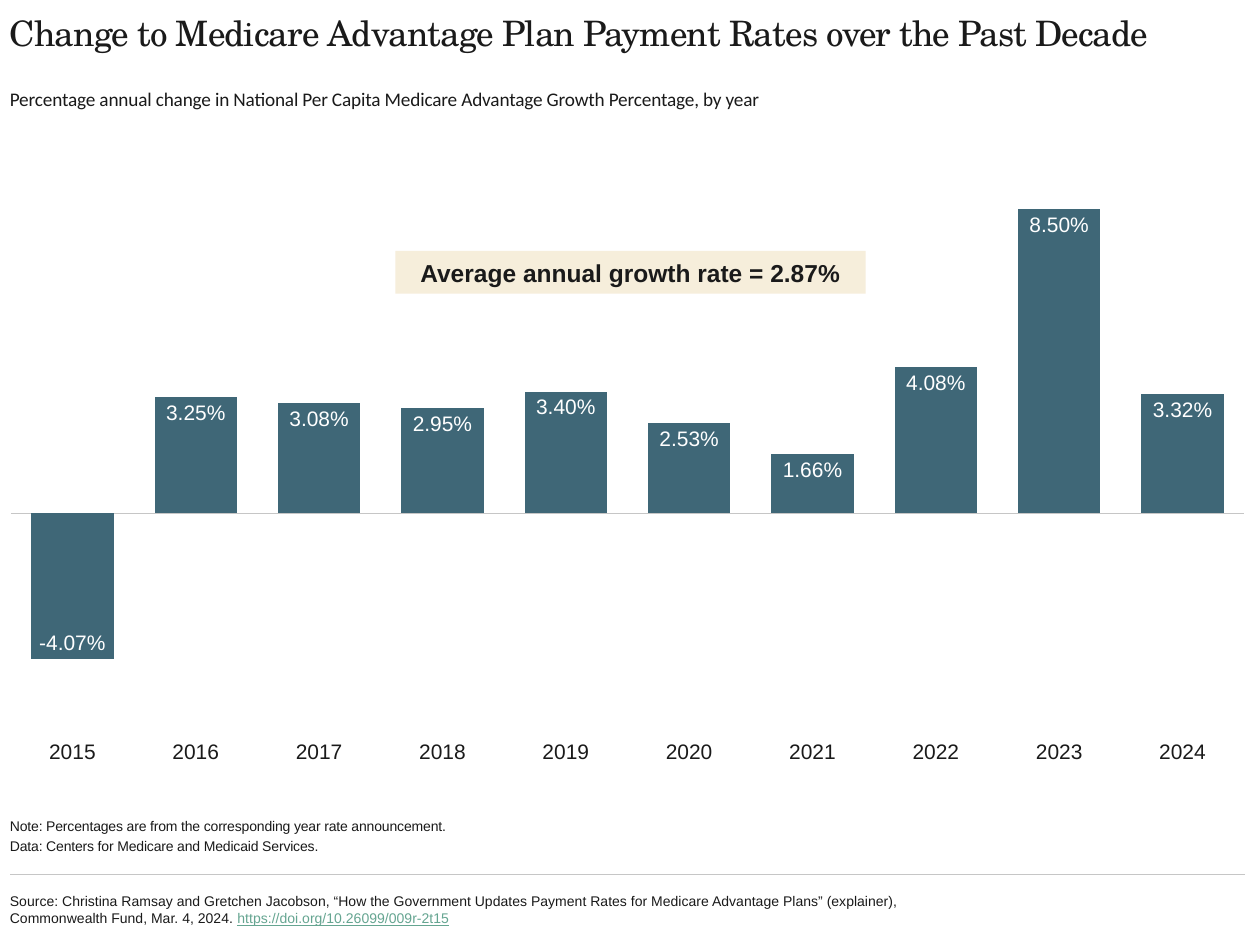
import pptx
import pptx.chart.data
import pptx.dml.color
import pptx.enum.chart
import pptx.enum.shapes
import pptx.enum.text
import pptx.oxml
import pptx.oxml.ns
import pptx.util

Cm = pptx.util.Cm
Pt = pptx.util.Pt
RGBColor = pptx.dml.color.RGBColor
ANCHOR = pptx.enum.text.MSO_ANCHOR
ALIGN = pptx.enum.text.PP_ALIGN

INK = RGBColor(0x1A, 0x1A, 0x1A)
TEAL = RGBColor(0x3F, 0x67, 0x77)
CREAM = RGBColor(0xF6, 0xEE, 0xDB)
GRAY = RGBColor(0xC6, 0xC6, 0xC6)
GREEN = RGBColor(0x65, 0xA5, 0x91)
WHITE = RGBColor(0xFF, 0xFF, 0xFF)

TITLE = "Change to Medicare Advantage Plan Payment Rates over the Past Decade"
SUBTITLE = "Percentage annual change in National Per Capita Medicare Advantage Growth Percentage, by year"
CALLOUT = "Average annual growth rate = 2.87%"
NOTES = [
    "Note: Percentages are from the corresponding year rate announcement.",
    "Data: Centers for Medicare and Medicaid Services.",
]
SOURCE = (
    "Source: Christina Ramsay and Gretchen Jacobson, “How the Government Updates Payment Rates "
    "for Medicare Advantage Plans” (explainer), Commonwealth Fund, Mar. 4, 2024. "
)
SOURCE_ADDRESS = "https://doi.org/10.26099/009r-2t15"
FIRST_YEAR = 2015
RATES = [-0.0407, 0.0325, 0.0308, 0.0295, 0.034, 0.0253, 0.0166, 0.0408, 0.085, 0.0332]

LEFT, WIDTH = 0.2, 24.9
PLOT_LAYOUT = {"x": 0, "y": 0.03, "w": 1, "h": 0.9}

TITLE_FONT = {"name": "TeX Gyre Schola", "size": Pt(20)}
SUBTITLE_FONT = {"name": "Calibri", "size": Pt(11)}
SMALL_FONT = {"name": "Arial", "size": Pt(8)}
CHART_FONT = {"name": "Arial", "size": Pt(12)}
CALLOUT_FONT = {"name": "Arial", "size": Pt(14), "bold": True}


def set_values(target, values):
    for name, value in values.items():
        setattr(target, name, value)


def format_font(font, values, color=INK):
    set_values(font, values)
    font.color.rgb = color


def place(shape, left, top, width, height):
    set_values(shape, {"left": Cm(left), "top": Cm(top), "width": Cm(width), "height": Cm(height)})


def write(shape, paragraphs, font, anchor, align=ALIGN.LEFT, spacing=0, margin=0):
    frame = shape.text_frame
    set_values(frame, {
        "word_wrap": True, "auto_size": pptx.enum.text.MSO_AUTO_SIZE.NONE, "vertical_anchor": anchor,
        "margin_left": margin, "margin_right": margin, "margin_top": margin, "margin_bottom": margin,
    })
    for index, runs in enumerate(paragraphs):
        paragraph = frame.paragraphs[0] if index == 0 else frame.add_paragraph()
        paragraph.alignment = align
        if index:
            paragraph.space_before = Pt(1.6)
        for text, extra, color in runs:
            run = paragraph.add_run()
            run.text = text
            format_font(run.font, {**font, **extra}, color)
            if spacing:
                run.font._element.set("spc", str(spacing))


def plain(text):
    return [(text, {}, INK)]


def add_text(slide, top, width, height, *args, **options):
    box = slide.shapes.add_textbox(Cm(LEFT), Cm(top), Cm(width), Cm(height))
    write(box, *args, **options)


def add_rule(slide, top):
    rule = slide.shapes.add_connector(
        pptx.enum.shapes.MSO_CONNECTOR.STRAIGHT, Cm(LEFT + WIDTH), Cm(top), Cm(LEFT), Cm(top))
    rule.line.color.rgb = GRAY
    rule.line.width = Pt(0.75)
    rule._element.spPr.append(pptx.oxml.parse_xml(
        f"<a:effectLst {pptx.oxml.ns.nsdecls('a')}/>"))


def add_rate_chart(slide):
    data = pptx.chart.data.CategoryChartData(number_format="0.00%")
    data.categories = [str(FIRST_YEAR + index) for index in range(len(RATES))]
    data.add_series("Series 1", RATES)
    chart = slide.shapes.add_chart(
        pptx.enum.chart.XL_CHART_TYPE.COLUMN_CLUSTERED,
        Cm(LEFT), Cm(2.74), Cm(WIDTH), Cm(12.85), data).chart
    set_values(chart, {"has_legend": False, "has_title": False})
    format_font(chart.font, CHART_FONT)

    category_axis = chart.category_axis
    set_values(category_axis, {
        "tick_label_position": pptx.enum.chart.XL_TICK_LABEL_POSITION.LOW,
        "major_tick_mark": pptx.enum.chart.XL_TICK_MARK.NONE,
        "has_major_gridlines": False,
    })
    category_axis.format.line.color.rgb = GRAY
    category_axis.format.line.width = Pt(1)
    format_font(category_axis.tick_labels.font, CHART_FONT)
    set_values(chart.value_axis, {
        "minimum_scale": -0.06, "maximum_scale": 0.1,
        "has_major_gridlines": False, "visible": False,
    })

    plot = chart.plots[0]
    set_values(plot, {"gap_width": 50, "vary_by_categories": False, "has_data_labels": True})
    set_values(plot.data_labels, {
        "show_value": True, "number_format": "0.00%", "number_format_is_linked": False,
        "position": pptx.enum.chart.XL_LABEL_POSITION.INSIDE_END,
    })
    format_font(plot.data_labels.font, CHART_FONT, WHITE)
    series = plot.series[0]
    series.invert_if_negative = False
    series.format.fill.solid()
    series.format.fill.fore_color.rgb = TEAL

    modes = "".join(f'<c:{side}Mode val="edge"/>' for side in "xy")
    sizes = "".join(f'<c:{side} val="{value}"/>' for side, value in PLOT_LAYOUT.items())
    layout = pptx.oxml.parse_xml(
        f"<c:layout {pptx.oxml.ns.nsdecls('c')}><c:manualLayout>"
        f'<c:layoutTarget val="inner"/>{modes}{sizes}</c:manualLayout></c:layout>')
    plot_area = chart._chartSpace.chart.plotArea
    for old_layout in plot_area.findall(pptx.oxml.ns.qn("c:layout")):
        plot_area.remove(old_layout)
    plot_area.insert(0, layout)


def add_callout(slide):
    callout = slide.shapes.add_shape(
        pptx.enum.shapes.MSO_SHAPE.RECTANGLE, Cm(7.97), Cm(5.06), Cm(9.48), Cm(0.86))
    callout.shadow.inherit = False
    callout.fill.solid()
    callout.fill.fore_color.rgb = CREAM
    callout.line.fill.background()
    write(callout, [plain(CALLOUT)], CALLOUT_FONT, ANCHOR.MIDDLE, ALIGN.CENTER, margin=Cm(0.13))


def main():
    presentation = pptx.Presentation()
    set_values(presentation, {"slide_width": Cm(25.4), "slide_height": Cm(19.05)})
    slide = presentation.slides.add_slide(presentation.slide_layouts[5])
    title = slide.shapes.title
    place(title, LEFT, 0.23, WIDTH, 1.19)
    write(title, [plain(TITLE)], TITLE_FONT, ANCHOR.TOP, spacing=-50)
    add_text(slide, 1.65, WIDTH, 0.69, [plain(SUBTITLE)], SUBTITLE_FONT, ANCHOR.MIDDLE, spacing=-10)
    add_rate_chart(slide)
    add_callout(slide)
    add_text(slide, 15.95, WIDTH, 1.27, [plain(note) for note in NOTES],
             SMALL_FONT, ANCHOR.BOTTOM, spacing=-10)
    add_rule(slide, 17.63)
    source_runs = plain(SOURCE) + [(SOURCE_ADDRESS, {"underline": True}, GREEN)]
    add_text(slide, 17.75, 19.8, 1.17, [source_runs], SMALL_FONT, ANCHOR.MIDDLE)
    presentation.save("out.pptx")


if __name__ == "__main__":
    main()
